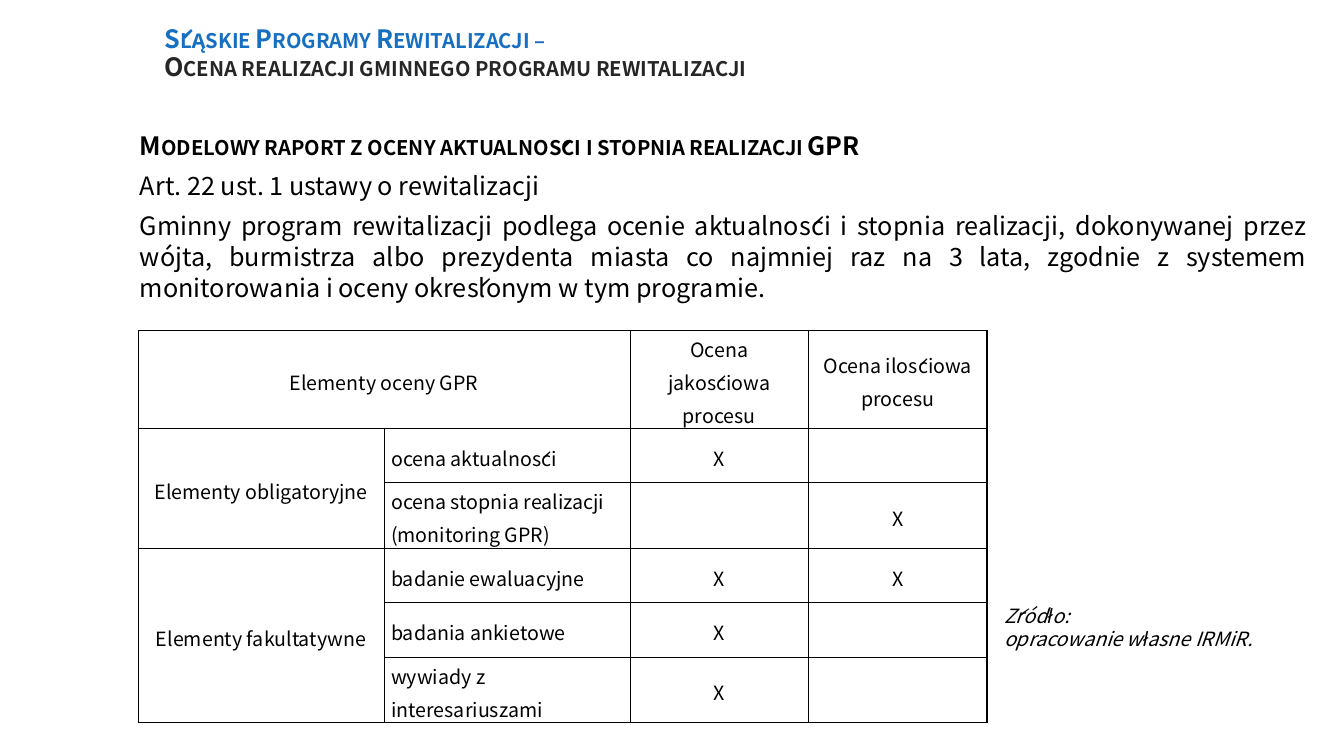
from pptx import Presentation
from pptx.dml.color import RGBColor
from pptx.enum.text import MSO_ANCHOR, MSO_AUTO_SIZE, PP_ALIGN
from pptx.oxml import parse_xml
from pptx.oxml.ns import nsdecls
from pptx.util import Inches, Pt

BLUE = RGBColor(0x17, 0x6F, 0xC1)
GRAY = RGBColor(0x26, 0x26, 0x26)
BLACK = RGBColor(0, 0, 0)
FONT = "Noto Sans CJK SC"
MIDDLE, BOTTOM = MSO_ANCHOR.MIDDLE, MSO_ANCHOR.BOTTOM
CENTER, LEFT, JUST = PP_ALIGN.CENTER, PP_ALIGN.LEFT, PP_ALIGN.JUSTIFY
GROW, FIXED = MSO_AUTO_SIZE.SHAPE_TO_FIT_TEXT, MSO_AUTO_SIZE.NONE

TITLE = [("Śląskie Programy Rewitalizacji –", BLUE),
         ("Ocena realizacji gminnego programu rewitalizacji", GRAY)]
BODY = [
    ("Modelowy raport z oceny aktualności i stopnia realizacji GPR", JUST, True),
    ("Art. 22 ust. 1 ustawy o rewitalizacji", LEFT, False),
    ("Gminny program rewitalizacji podlega ocenie aktualności i stopnia "
     "realizacji, dokonywanej przez wójta, burmistrza albo prezydenta miasta "
     "co najmniej raz na 3 lata, zgodnie z systemem monitorowania i oceny "
     "określonym w tym programie.", JUST, False),
]
ROWS = [
    ("Elementy oceny GPR", "", "Ocena jakościowa procesu", "Ocena ilościowa procesu"),
    ("Elementy obligatoryjne", "ocena aktualności", "X", ""),
    ("", "ocena stopnia realizacji (monitoring GPR)", "", "X"),
    ("Elementy fakultatywne", "badanie ewaluacyjne", "X", "X"),
    ("", "badania ankietowe", "X", ""),
    ("", "wywiady z interesariuszami", "X", ""),
]
SPANS = [((0, 0), (0, 1)), ((1, 0), (2, 0)), ((3, 0), (5, 0))]
WIDTHS = (2.44, 2.44, 1.77, 1.77)
LINES = (3, 1, 2, 1, 1, 2)
HEIGHTS = {1: 0.54, 2: 0.65, 3: 0.97}
SOURCE = ["Źródło:", "opracowanie własne IRMiR."]


def write(para, text, size=14, color=BLACK, bold=False, italic=False,
          small=False, align=LEFT, line=None, after=0):
    run = para.add_run()
    run.text = text
    font = run.font
    font.name, font.size, font.bold, font.italic = FONT, Pt(size), bold, italic
    font.color.rgb = color
    props = run._r.get_or_add_rPr()
    if small:
        props.set("cap", "small")
    para.alignment, para.space_before, para.space_after = align, 0, Pt(after)
    if line:
        para.line_spacing = line


def paras(frame, count):
    return [frame.paragraphs[0]] + [frame.add_paragraph() for _ in range(count - 1)]


def border(cell):
    props = cell._tc.get_or_add_tcPr()
    for i, side in enumerate(("lnL", "lnR", "lnT", "lnB")):
        props.insert(i, parse_xml(
            f'<a:{side} {nsdecls("a")} w="12700"><a:solidFill>'
            f'<a:srgbClr val="{BLACK}"/></a:solidFill></a:{side}>'))


def add_box(slide, left, top, width, height):
    box = slide.shapes.add_textbox(*map(Inches, (left, top, width, height)))
    box.text_frame.word_wrap = True
    return box.text_frame


def add_title(slide):
    title = slide.shapes.title
    title.left, title.top, title.width, title.height = map(
        Inches, (1.53, 0.33, 7.39, 0.53))
    frame = title.text_frame
    frame.vertical_anchor, frame.auto_size = BOTTOM, FIXED
    para = frame.paragraphs[0]
    for i, (text, color) in enumerate(TITLE):
        if i:
            para.add_line_break()
        write(para, text, size=18, color=color, bold=True, small=True, line=0.9)


def add_table(slide):
    heights = [HEIGHTS[count] for count in LINES]
    table = slide.shapes.add_table(
        len(ROWS), len(WIDTHS), Inches(1.37), Inches(3.28),
        Inches(sum(WIDTHS)), Inches(sum(heights))).table
    table.first_row = table.horz_banding = False
    for col, width in zip(table.columns, WIDTHS):
        col.width = Inches(width)
    for row, height in zip(table.rows, heights):
        row.height = Inches(height)
    for first, last in SPANS:
        table.cell(*first).merge(table.cell(*last))
    for r, row in enumerate(ROWS):
        for c, text in enumerate(row):
            cell = table.cell(r, c)
            cell.fill.background()
            border(cell)
            cell.vertical_anchor = MIDDLE
            cell.margin_left = cell.margin_right = Inches(0.07)
            cell.margin_top = cell.margin_bottom = 0
            if text:
                write(cell.text_frame.paragraphs[0], text, line=1.15, after=6,
                      align=LEFT if c == 1 else CENTER)


def main():
    """Build the slide on the assessment of a revitalisation programme."""
    deck = Presentation()
    deck.slide_width, deck.slide_height = Inches(13.33), Inches(7.5)
    slide = deck.slides.add_slide(deck.slide_layouts[5])
    add_title(slide)
    frame = add_box(slide, 1.29, 1.23, 11.77, 2.05)
    for para, (text, align, head) in zip(paras(frame, len(BODY)), BODY):
        write(para, text, size=18, bold=head, small=head, align=align,
              line=1.04, after=6)
    add_table(slide)
    frame = add_box(slide, 9.86, 5.94, 2.81, 0.57)
    frame.auto_size = GROW
    for para, text in zip(paras(frame, len(SOURCE)), SOURCE):
        write(para, text, italic=True)
    deck.save("out.pptx")


if __name__ == "__main__":
    main()
